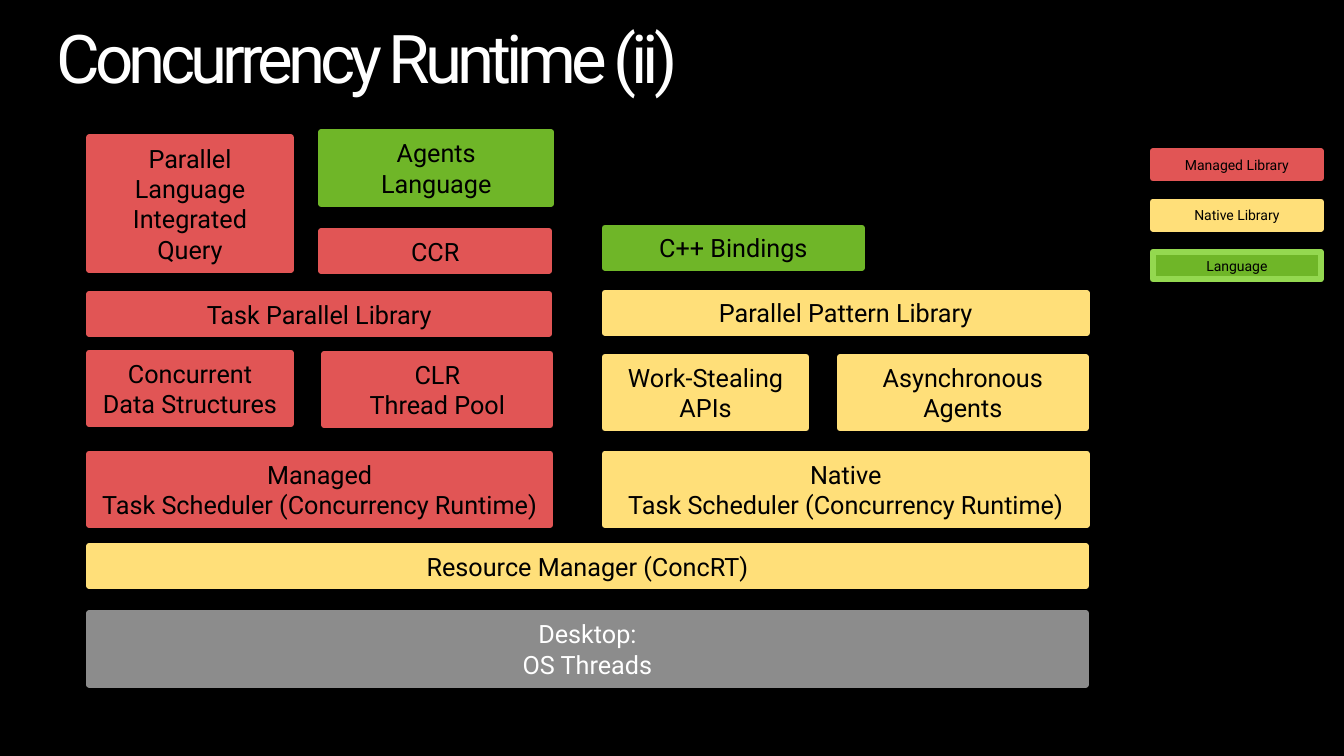
from dataclasses import dataclass

from lxml.etree import SubElement
from pptx import Presentation
from pptx.dml.color import RGBColor
from pptx.enum.shapes import MSO_SHAPE
from pptx.enum.text import MSO_ANCHOR, MSO_AUTO_SIZE, PP_ALIGN
from pptx.oxml.ns import qn
from pptx.util import Emu, Pt

EMU_PER_PX = 9525


@dataclass(frozen=True)
class Theme:
    font: str = "Roboto"
    background: str = "000000"
    dark_text: str = "000000"
    light_text: str = "FFFFFF"
    managed: str = "E15555"
    native: str = "FFDF79"
    language: str = "6FB628"
    language_edge: str = "94D850"
    system: str = "8C8C8C"
    title_size: int = 48
    block_size: int = 18
    legend_size: int = 10
    edge_width: float = 4.33
    title_spacing: int = -360


def px(n):
    return Emu(n * EMU_PER_PX)


def rgb(code):
    return RGBColor.from_string(code)


class SlideBuilder:
    def __init__(self, prs, theme):
        self.theme = theme
        self.s = prs.slides.add_slide(prs.slide_layouts[5])
        fill = self.s.background.fill
        fill.solid()
        fill.fore_color.rgb = rgb(theme.background)

    def place(self, sp, box):
        sp.left, sp.top, sp.width, sp.height = map(px, box)

    def run(self, p, text, size, color):
        r = p.add_run()
        r.text = text
        r.font.name = self.theme.font
        r.font.size = Pt(size)
        r.font.color.rgb = rgb(color)
        return r

    def title(self, text, box):
        sp = self.s.shapes.title
        self.place(sp, box)
        tf = sp.text_frame
        tf.margin_left = tf.margin_right = tf.margin_top = tf.margin_bottom = 0
        tf.word_wrap = True
        tf.auto_size = MSO_AUTO_SIZE.NONE
        tf.vertical_anchor = MSO_ANCHOR.TOP
        p = tf.paragraphs[0]
        p.alignment = PP_ALIGN.LEFT
        p.line_spacing = 0.9
        r = self.run(p, text, self.theme.title_size, self.theme.light_text)
        r.font._element.set("spc", str(self.theme.title_spacing))

    def block(self, paragraphs, box, fill, edge=None, size=None, color=None):
        sp = self.s.shapes.add_shape(MSO_SHAPE.RECTANGLE, *map(px, box))
        sp.shadow.inherit = False
        sp.fill.solid()
        sp.fill.fore_color.rgb = rgb(fill)
        sp.line.color.rgb = rgb(edge or fill)
        sp.line.width = Pt(self.theme.edge_width)
        SubElement(sp.line._get_or_add_ln(), qn("a:round"))
        tf = sp.text_frame
        tf.word_wrap = True
        tf.auto_size = MSO_AUTO_SIZE.NONE
        tf.vertical_anchor = MSO_ANCHOR.MIDDLE
        for i, text in enumerate(paragraphs):
            p = tf.add_paragraph() if i else tf.paragraphs[0]
            p.alignment = PP_ALIGN.CENTER
            for j, line in enumerate(text.split("\n")):
                if j:
                    p.add_line_break()
                self.run(p, line, size or self.theme.block_size,
                         color or self.theme.dark_text)

    def legend(self, entries, left, top, width, height, pitch):
        for i, (label, fill, edge) in enumerate(entries):
            self.block([label], (left, top + i * pitch, width, height),
                       fill, edge, self.theme.legend_size)


def main():
    theme = Theme()
    prs = Presentation()
    prs.slide_width, prs.slide_height = px(1280), px(720)
    slide = SlideBuilder(prs, theme)
    slide.title("Concurrency Runtime (ii)", (54, 24, 1172, 70))

    left, right, one_line, two_lines = 85, 576, 38, 68
    scheduler = "Task Scheduler (Concurrency Runtime)"
    slide.block(["Desktop:", "OS Threads"], (left, 584, 949, two_lines),
                theme.system, color=theme.light_text)

    blocks = [
        (["Resource Manager (ConcRT)"], (left, 520, 949, one_line), theme.native),
        (["Native", scheduler], (right, 432, 459, two_lines), theme.native),
        (["Managed", scheduler], (left, 432, 439, two_lines), theme.managed),
        (["Task Parallel Library"], (left, 280, 438, one_line), theme.managed),
        (["Parallel Language Integrated Query"], (left, 131, 192, 126), theme.managed),
        (["CLR\nThread Pool"], (309, 337, 215, two_lines), theme.managed),
        (["C++ Bindings"], (right, 217, 245, one_line), theme.language),
        (["Asynchronous", "Agents"], (800, 340, 234, two_lines), theme.native),
        (["Work-Stealing APIs"], (right, 340, 192, two_lines), theme.native),
        (["Parallel Pattern Library"], (right, 279, 459, one_line), theme.native),
        (["Agents\nLanguage"], (306, 126, 219, two_lines), theme.language),
        (["Concurrent Data Structures"], (left, 336, 192, two_lines), theme.managed),
        (["CCR"], (306, 220, 217, one_line), theme.managed),
    ]
    for paragraphs, box, fill in blocks:
        slide.block(paragraphs, box, fill)

    slide.legend([
        ("Managed Library", theme.managed, theme.managed),
        ("Native Library", theme.native, theme.native),
        ("Language", theme.language, theme.language_edge),
    ], left=1098, top=144, width=160, height=26, pitch=48)
    prs.save("out.pptx")


if __name__ == "__main__":
    main()
